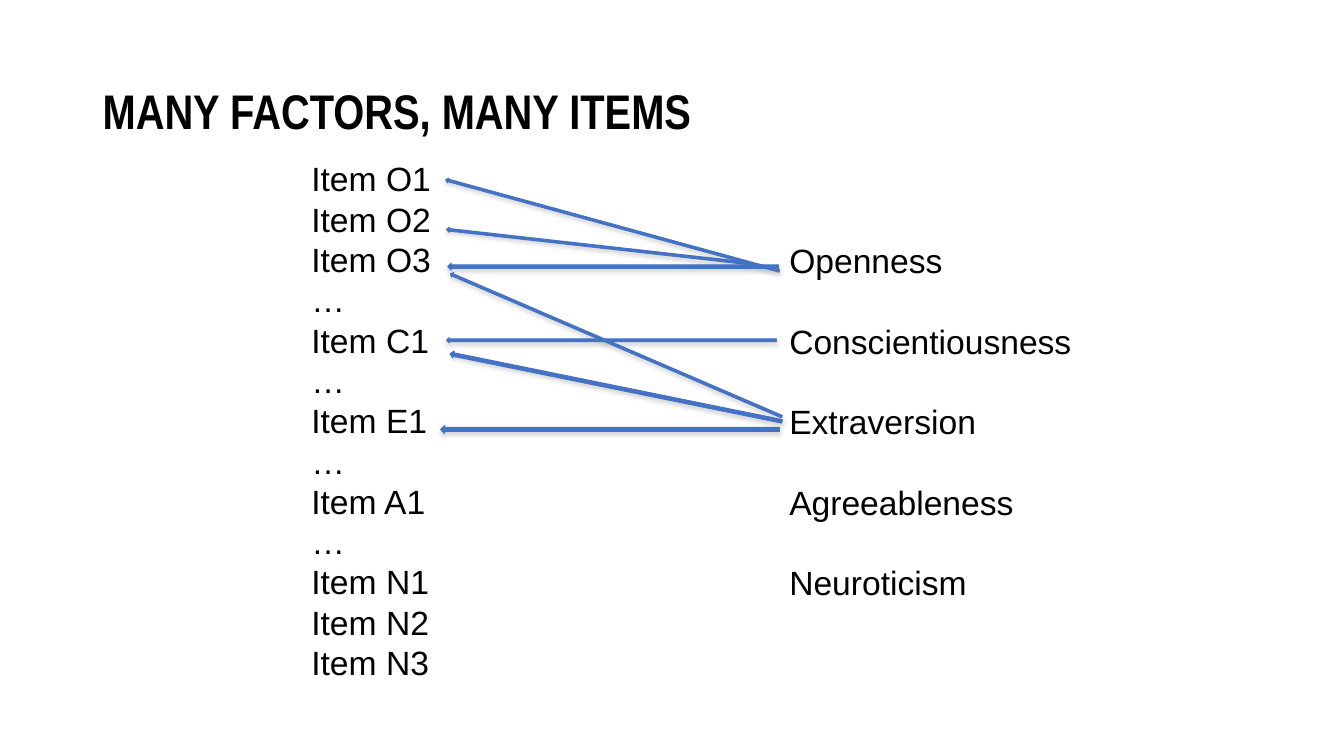
from lxml import etree
from pptx import Presentation
from pptx.dml.color import RGBColor
from pptx.enum.shapes import MSO_SHAPE
from pptx.enum.text import MSO_ANCHOR
from pptx.oxml.ns import qn
from pptx.util import Inches, Pt

BLACK = RGBColor(0x00, 0x00, 0x00)
BLUE = RGBColor(0x44, 0x72, 0xC4)
GREY = RGBColor(0x80, 0x80, 0x80)
RIGHT_ARROW = MSO_SHAPE.RIGHT_ARROW
TOP, MIDDLE = MSO_ANCHOR.TOP, MSO_ANCHOR.MIDDLE
LINE_PITCH = Pt(28.8)

ITEMS = ["Item O1", "Item O2", "Item O3", "…", "Item C1", "…", "Item E1",
         "…", "Item A1", "…", "Item N1", "Item N2", "Item N3"]
FACTORS = ["Openness", "Conscientiousness", "Extraversion", "Agreeableness",
           "Neuroticism"]
LOADINGS = [
    (4.43, 3.35, 3.27, 0.05, 180),
    (4.36, 2.21, 3.43, 0.05, 195.3),
    (4.32, 3.4, 3.58, 0.05, 203.3),
    (4.42, 2.42, 3.02, 0.05, 186.4),
    (4.44, 2.61, 3.28, 0.07, 180),
    (4.43, 3.81, 3.36, 0.07, 191.5),
    (4.37, 4.22, 3.36, 0.08, 180),
]


class FactorSlide:
    """Draws titles, lists and loading arrows in one style on a slide."""

    def __init__(self, prs):
        self.slide = prs.slides.add_slide(prs.slide_layouts[6])

    def text(self, lines, left, top, width, height, size=24, font="Arial",
             bold=False, anchor=TOP, spacing=LINE_PITCH, gap=Pt(0)):
        box = self.slide.shapes.add_textbox(
            Inches(left), Inches(top), Inches(width), Inches(height))
        tf = box.text_frame
        tf.word_wrap = True
        tf.vertical_anchor = anchor
        tf.text = "\n".join(lines)
        for i, p in enumerate(tf.paragraphs):
            p.line_spacing = spacing
            p.space_before = gap if i else Pt(0)
            for r in p.runs:
                r.font.name = font
                r.font.size = Pt(size)
                r.font.bold = bold
                r.font.color.rgb = BLACK

    def title(self, text):
        self.text([text], 0.92, 0.4, 11.5, 1.45, size=34.7,
                  font="Arial Narrow", bold=True, anchor=MIDDLE, spacing=0.9)

    def arrow(self, left, top, width, height, rotation):
        sp = self.slide.shapes.add_shape(
            RIGHT_ARROW, Inches(left), Inches(top), Inches(width), Inches(height))
        sp.rotation = rotation
        sp.fill.solid()
        sp.fill.fore_color.rgb = BLUE
        sp.line.color.rgb = BLUE
        sp.line.width = Pt(0.75)
        self.shadow(sp)

    def shadow(self, sp):
        sp.shadow.inherit = False
        effects = sp._element.spPr.find(qn("a:effectLst"))
        outer = etree.SubElement(
            effects, qn("a:outerShdw"), blurRad=str(Pt(3.1)),
            dist=str(Pt(1.8)), dir="5400000", rotWithShape="0")
        color = etree.SubElement(outer, qn("a:srgbClr"), val=str(GREY))
        etree.SubElement(color, qn("a:alpha"), val="35000")


def main():
    prs = Presentation()
    prs.slide_width, prs.slide_height = Inches(13.33), Inches(7.5)
    s = FactorSlide(prs)
    s.title("MANY FACTORS, MANY ITEMS")
    s.text(ITEMS, 2.99, 1.52, 1.4, 5.35)
    s.text(FACTORS, 7.73, 2.33, 3.03, 3.74, gap=LINE_PITCH)
    for loading in LOADINGS:
        s.arrow(*loading)
    prs.save("out.pptx")


if __name__ == "__main__":
    main()
